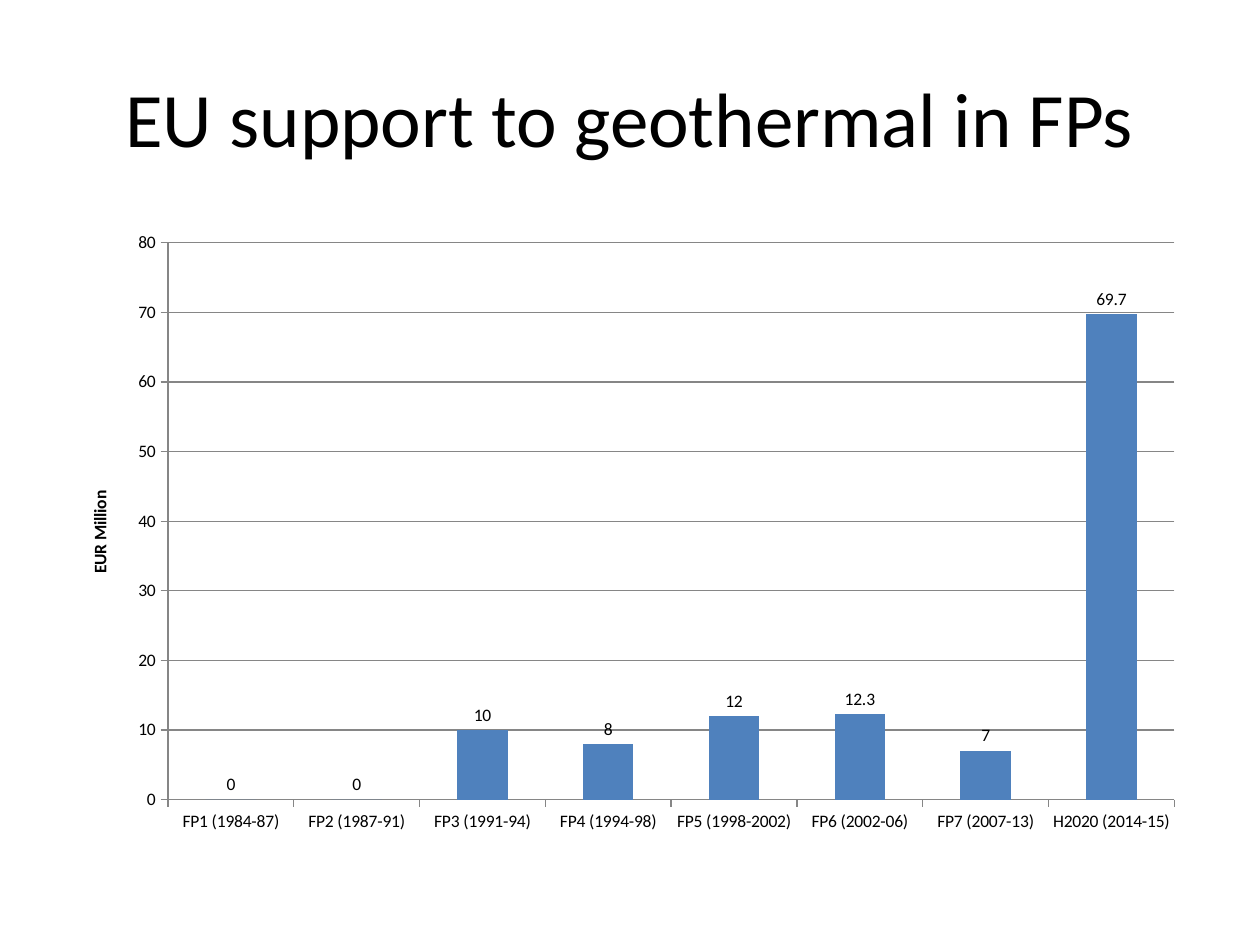
from dataclasses import dataclass

import pptx
import pptx.chart.data
import pptx.dml.color
import pptx.enum.chart
import pptx.enum.text
import pptx.util

Inches = pptx.util.Inches
RGBColor = pptx.dml.color.RGBColor


@dataclass(frozen=True)
class Theme:
    font: str = "Calibri"
    text: str = "000000"
    bar: str = "4F81BD"
    line: str = "868686"
    title_size: int = 44
    chart_size: int = 10


class SlideBuilder:
    """Holds the theme and the current slide and adds styled elements to it."""

    def __init__(self, s, theme):
        self.s = s
        self.theme = theme

    def style_font(self, font, size, bold=False):
        font.name = self.theme.font
        font.size = pptx.util.Pt(size)
        font.bold = bold
        font.color.rgb = RGBColor.from_string(self.theme.text)

    def style_line(self, line):
        line.color.rgb = RGBColor.from_string(self.theme.line)
        line.width = pptx.util.Pt(0.75)

    def title(self, text, left, top, width, height):
        sp = self.s.shapes.title
        sp.left, sp.top = Inches(left), Inches(top)
        sp.width, sp.height = Inches(width), Inches(height)
        tf = sp.text_frame
        tf.text = text
        tf.vertical_anchor = pptx.enum.text.MSO_ANCHOR.MIDDLE
        p = tf.paragraphs[0]
        p.alignment = pptx.enum.text.PP_ALIGN.CENTER
        self.style_font(p.font, self.theme.title_size)

    def column_chart(self, values, axis_title, left, top, width, height):
        data = pptx.chart.data.CategoryChartData()
        data.categories = list(values)
        data.add_series("Series 1", list(values.values()))
        chart = self.s.shapes.add_chart(
            pptx.enum.chart.XL_CHART_TYPE.COLUMN_CLUSTERED,
            Inches(left), Inches(top), Inches(width), Inches(height), data,
        ).chart
        chart.has_title = False
        chart.has_legend = False
        self.style_font(chart.font, self.theme.chart_size)

        plot = chart.plots[0]
        plot.gap_width = 150
        plot.vary_by_categories = False
        fill = plot.series[0].format.fill
        fill.solid()
        fill.fore_color.rgb = RGBColor.from_string(self.theme.bar)
        plot.has_data_labels = True
        labels = plot.data_labels
        labels.show_value = True
        labels.position = pptx.enum.chart.XL_LABEL_POSITION.OUTSIDE_END
        self.style_font(labels.font, self.theme.chart_size)

        for axis in (chart.category_axis, chart.value_axis):
            axis.major_tick_mark = pptx.enum.chart.XL_TICK_MARK.OUTSIDE
            axis.minor_tick_mark = pptx.enum.chart.XL_TICK_MARK.NONE
            self.style_line(axis.format.line)
        axis = chart.value_axis
        axis.minimum_scale, axis.maximum_scale, axis.major_unit = 0, 80, 10
        axis.has_major_gridlines = True
        self.style_line(axis.major_gridlines.format.line)
        tf = axis.axis_title.text_frame
        tf.text = axis_title
        self.style_font(tf.paragraphs[0].font, self.theme.chart_size, bold=True)


def main():
    prs = pptx.Presentation()
    prs.slide_width, prs.slide_height = Inches(10), Inches(7.5)
    s = prs.slides.add_slide(prs.slide_layouts.get_by_name("Title Only"))
    builder = SlideBuilder(s, Theme())
    builder.title("EU support to geothermal in FPs", 0.5, 0.3, 9, 1.25)
    funding = {
        "FP1 (1984-87)": 0,
        "FP2 (1987-91)": 0,
        "FP3 (1991-94)": 10,
        "FP4 (1994-98)": 8,
        "FP5 (1998-2002)": 12,
        "FP6 (2002-06)": 12.3,
        "FP7 (2007-13)": 7,
        "H2020 (2014-15)": 69.7,
    }
    builder.column_chart(funding, "EUR Million", 0.5, 1.75, 9, 4.95)
    prs.save("out.pptx")


if __name__ == "__main__":
    main()
